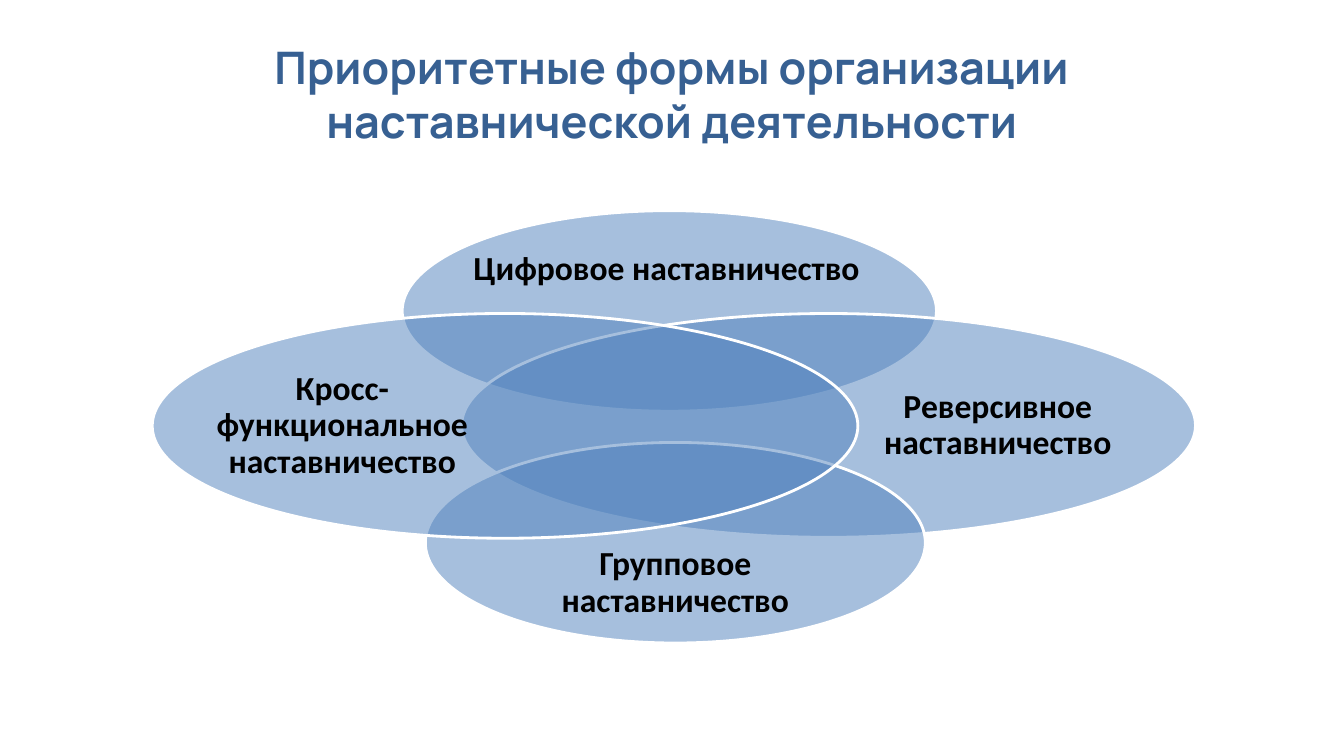
from lxml.etree import SubElement
from pptx import Presentation
from pptx.dml.color import RGBColor
from pptx.enum.shapes import MSO_SHAPE as Preset
from pptx.enum.text import MSO_ANCHOR as Anchor, PP_ALIGN as Align
from pptx.oxml.ns import qn
from pptx.util import Inches, Pt

COLORS = {"title": "376092", "petal": "4F81BD", "outline": "FFFFFF", "label": "000000"}
WIDTH, HEIGHT = Inches(13.333), Inches(7.5)

# Label, ellipse area, label area; areas are left, top, width, height in percent of the slide
FORMS = [
    ("Цифровое наставничество", (29.93, 27.87, 39.75, 26.53), (34.5, 31.47, 30.2, 8.4)),
    ("Реверсивное наставничество", (34.35, 41.47, 54.6, 29.6), (63.75, 44.93, 21, 22.8)),
    ("Групповое наставничество", (31.65, 58.53, 37.2, 26.53), (36.75, 72.93, 27, 8.4)),
    ("Кросс-функциональное наставничество", (11.33, 41.47, 52.5, 29.73),
     (15.38, 44.93, 20.18, 22.8)),
]


def color(name):
    return RGBColor.from_string(COLORS[name])


def place(area):
    """Turn percentages of the slide into lengths."""
    return [round(share / 100 * side) for share, side in zip(area, (WIDTH, HEIGHT) * 2)]


def add_text(page, text, area, font_name, size, color_name, line_spacing=1.0):
    box = page.shapes.add_textbox(*place(area))
    frame = box.text_frame
    frame.word_wrap = True
    frame.vertical_anchor = Anchor.MIDDLE
    frame.margin_left = frame.margin_right = frame.margin_top = frame.margin_bottom = 0
    frame.text = text
    para = frame.paragraphs[0]
    para.alignment = Align.CENTER
    para.line_spacing = line_spacing
    for span in para.runs:
        span.font.name = font_name
        span.font.size = Pt(size)
        span.font.bold = True
        span.font.color.rgb = color(color_name)


def add_petal(page, area):
    """Draw a half-transparent ellipse with a white outline."""
    petal = page.shapes.add_shape(Preset.OVAL, *place(area))
    petal.shadow.inherit = False
    petal.fill.solid()
    petal.fill.fore_color.rgb = color("petal")
    tint = petal.element.spPr.find(qn("a:solidFill")).find(qn("a:srgbClr"))
    SubElement(tint, qn("a:alpha"), val="50000")
    petal.line.color.rgb = color("outline")
    petal.line.width = Pt(2)


def main():
    deck = Presentation()
    deck.slide_width, deck.slide_height = WIDTH, HEIGHT
    page = deck.slides.add_slide(deck.slide_layouts[6])
    add_text(page, "Приоритетные формы организации\vнаставнической деятельности",
             (5, 4, 90, 16.67), "Manrope", 32, "title")
    for label, petal_area, label_area in FORMS:
        add_petal(page, petal_area)
        add_text(page, label, label_area, "Calibri", 24, "label", 0.9)
    deck.save("out.pptx")


if __name__ == "__main__":
    main()
